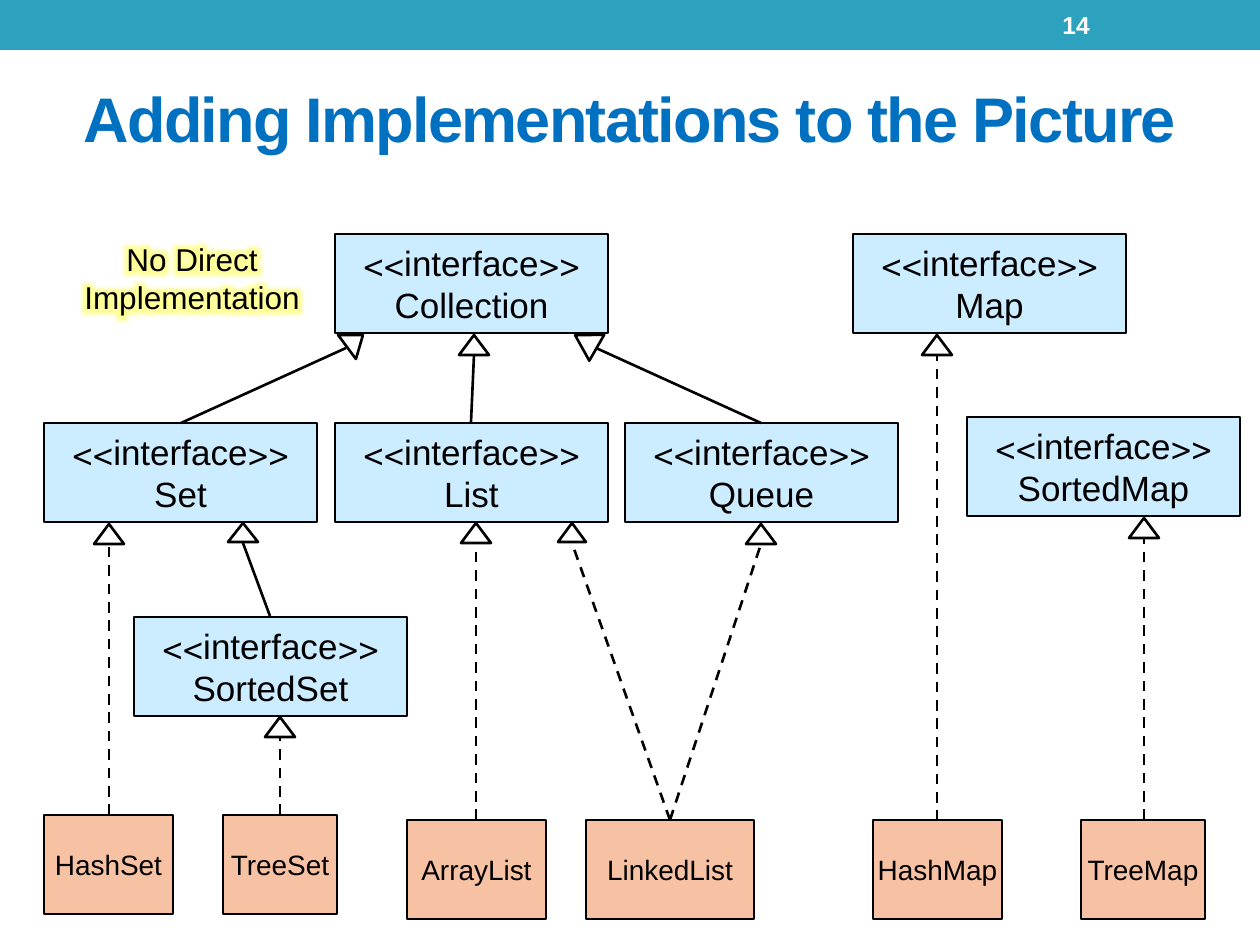
"""Build a class diagram slide of collection interfaces and their implementations."""
from dataclasses import dataclass

from lxml import etree
from pptx import Presentation
from pptx import util as u
from pptx.dml.color import RGBColor
from pptx.enum import dml, shapes, text
from pptx.oxml import ns

PX = u.Inches(1) / 126
FONT = "Arial"
BAND = RGBColor(0x2D, 0xA2, 0xBF)
BLUE = RGBColor(0x00, 0x70, 0xC0)
SKY = RGBColor(0xCC, 0xEC, 0xFF)
PEACH = RGBColor(0xF7, 0xC1, 0xA4)
YELLOW = RGBColor(0xFF, 0xFF, 0x00)
BLACK = RGBColor(0x00, 0x00, 0x00)
WHITE = RGBColor(0xFF, 0xFF, 0xFF)


@dataclass(frozen=True)
class Interface:
    name: str
    left: int
    top: int


@dataclass(frozen=True)
class Implementation:
    name: str
    left: int
    top: int
    width: int


@dataclass(frozen=True)
class Relation:
    start: tuple[int, int]
    end: tuple[int, int]
    dashed: bool = False


@dataclass(frozen=True)
class Head:
    left: int
    top: int
    width: int = 30
    height: int = 20
    rotation: float = 0
    filled: bool = False


INTERFACES = [
    Interface("Collection", 335, 234),
    Interface("Set", 44, 423),
    Interface("List", 335, 423),
    Interface("SortedSet", 134, 617),
    Interface("Map", 853, 234),
    Interface("SortedMap", 967, 417),
    Interface("Queue", 625, 423),
]
IMPLEMENTATIONS = [
    Implementation("HashSet", 44, 815, 129),
    Implementation("TreeSet", 223, 815, 114),
    Implementation("ArrayList", 407, 820, 139),
    Implementation("LinkedList", 586, 820, 168),
    Implementation("HashMap", 873, 820, 129),
    Implementation("TreeMap", 1081, 820, 124),
]
RELATIONS = [
    Relation((181, 423), (346, 348)),
    Relation((471, 423), (474, 355)),
    Relation((761, 423), (596, 348)),
    Relation((270, 616), (243, 543)),
    Relation((109, 815), (109, 544), True),
    Relation((280, 815), (280, 737), True),
    Relation((476, 820), (476, 543), True),
    Relation((670, 820), (572, 543), True),
    Relation((670, 820), (761, 544), True),
    Relation((937, 821), (937, 355), True),
    Relation((1144, 820), (1144, 538), True),
]
HEADS = [
    Head(571, 329, height=25, rotation=299.9),
    Head(459, 335),
    Head(340, 331, rotation=53.3),
    Head(228, 523, height=19, filled=True),
    Head(265, 717),
    Head(461, 523),
    Head(558, 523, 28, 19),
    Head(1129, 518),
    Head(746, 524, filled=True),
    Head(94, 524),
    Head(922, 335),
]


def px(*lengths: int) -> list[int]:
    """Turn px lengths into EMU."""
    return [round(length * PX) for length in lengths]


def write(box, *lines: str, size: int, color=BLACK, bold=False, wrap=True, rtl=True,
          align=text.PP_ALIGN.CENTER, anchor=text.MSO_ANCHOR.MIDDLE) -> list:
    """Write one paragraph per line and return the spans."""
    frame = box.text_frame
    frame.word_wrap = wrap
    frame.vertical_anchor = anchor
    spans = []
    for index, line in enumerate(lines):
        para = frame.add_paragraph() if index else frame.paragraphs[0]
        para.alignment = align
        if rtl:
            para._p.get_or_add_pPr().set("rtl", "1")
        span = para.add_run()
        span.text = line
        span.font.size = u.Pt(size)
        span.font.bold = bold
        span.font.color.rgb = color
        span.font.name = FONT
        spans.append(span)
    return spans


def add_shape(page, kind, area: tuple[int, ...], fill=None, line_width: float = 0):
    """Add a preset shape without shadow."""
    shape = page.shapes.add_shape(kind, *px(*area))
    shape.shadow.inherit = False
    if fill is None:
        shape.fill.background()
    else:
        shape.fill.solid()
        shape.fill.fore_color.rgb = fill
    if line_width:
        shape.line.color.rgb = BLACK
        shape.line.width = u.Pt(line_width)
    else:
        shape.line.fill.background()
    return shape


def add_class(page, area: tuple[int, ...], fill: RGBColor, *lines: str, size: int) -> None:
    """Add a labelled class box."""
    box = add_shape(page, shapes.MSO_SHAPE.FLOWCHART_PROCESS, area, fill, 0.75)
    write(box, *lines, size=size, wrap=False)


def add_relation(page, relation: Relation) -> None:
    """Draw the line of a relation."""
    line = page.shapes.add_connector(
        shapes.MSO_CONNECTOR.STRAIGHT, *px(*relation.start, *relation.end))
    line.line.color.rgb = BLACK
    line.line.width = u.Pt(1.5)
    if relation.dashed:
        line.line.dash_style = dml.MSO_LINE.DASH
    etree.SubElement(line._element.spPr, ns.qn("a:effectLst"))


def add_head(page, head: Head) -> None:
    """Draw the triangle at the end of a relation."""
    area = (head.left, head.top, head.width, head.height)
    triangle = add_shape(page, shapes.MSO_SHAPE.FLOWCHART_EXTRACT, area,
                         WHITE if head.filled else None, 1.5)
    triangle.rotation = head.rotation


def add_glow(span, color: RGBColor, radius: int) -> None:
    """Give the letters of a span a soft glow."""
    effects = etree.Element(ns.qn("a:effectLst"))
    glow = etree.SubElement(effects, ns.qn("a:glow"), rad=str(u.Pt(radius)))
    tint = etree.SubElement(glow, ns.qn("a:srgbClr"), val=str(color))
    etree.SubElement(tint, ns.qn("a:alpha"), val="40000")
    span.font._element.find(ns.qn("a:solidFill")).addnext(effects)


def main() -> None:
    """Build and save the deck."""
    deck = Presentation()
    deck.slide_width, deck.slide_height = px(1260, 945)
    page = deck.slides.add_slide(deck.slide_layouts[6])
    add_shape(page, shapes.MSO_SHAPE.RECTANGLE, (0, 0, 1260, 50), BAND)

    title = page.shapes.add_textbox(*px(57, 35, 1146, 165))
    for span in write(title, "Adding Implementations to the Picture",
                      size=36, color=BLUE, bold=True):
        span.font._element.set("spc", "-100")
    number = page.shapes.add_textbox(*px(1050, 2, 147, 45))
    write(number, "14", size=14, color=WHITE, bold=True, rtl=False,
          align=text.PP_ALIGN.LEFT)
    note = page.shapes.add_textbox(*px(71, 234, 242, 88))
    for span in write(note, "No Direct Implementation", size=18,
                      anchor=text.MSO_ANCHOR.TOP):
        add_glow(span, YELLOW, 18)

    for item in INTERFACES:
        add_class(page, (item.left, item.top, 273, 99), SKY,
                  "<<interface>>", item.name, size=20)
    for item in IMPLEMENTATIONS:
        add_class(page, (item.left, item.top, item.width, 99), PEACH, item.name, size=16)
    for relation in RELATIONS:
        add_relation(page, relation)
    for head in HEADS:
        add_head(page, head)
    deck.save("out.pptx")


if __name__ == "__main__":
    main()
